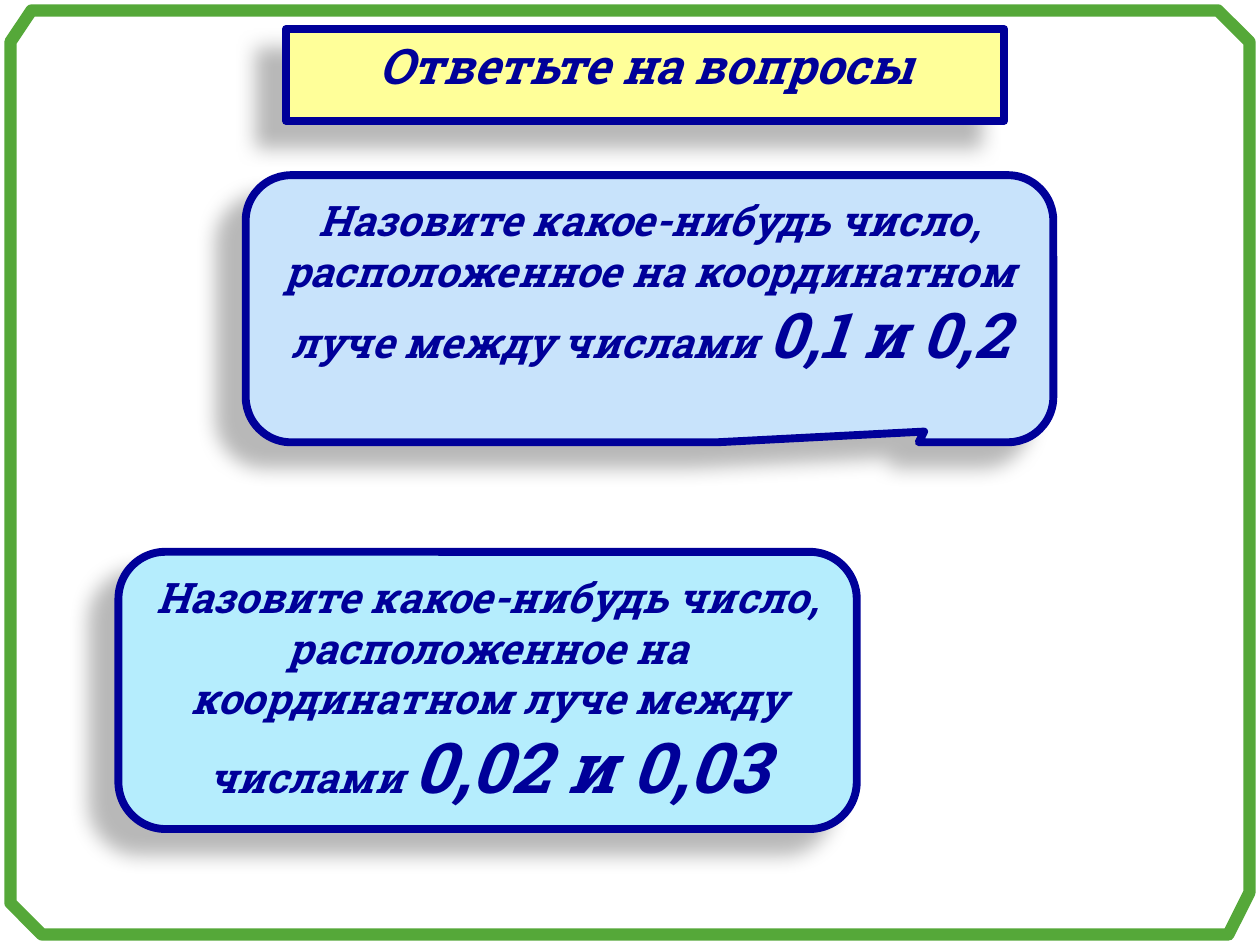
from dataclasses import dataclass

from lxml.etree import SubElement
from pptx import Presentation
from pptx.dml.color import RGBColor
from pptx.enum.shapes import MSO_SHAPE
from pptx.enum.text import MSO_ANCHOR, MSO_AUTO_SIZE, PP_ALIGN
from pptx.oxml.ns import qn
from pptx.shapes.autoshape import Shape
from pptx.slide import Slide
from pptx.util import Emu, Inches, Pt

CELL = Inches(0.1)
COLUMNS, ROWS = 100, 75


@dataclass(frozen=True)
class Theme:
    font: str = "Roboto Slab"
    ink: str = "000099"
    frame: str = "55A839"
    title_fill: str = "FFFF99"
    first_fill: str = "C8E3FB"
    second_fill: str = "B5EDFD"
    shadow: str = "000000"
    frame_width: float = 7
    outline_width: float = 4.5
    title_size: int = 28
    question_size: int = 24
    first_range_size: int = 36
    second_range_size: int = 40


THEME = Theme()
QUESTION = "Назовите какое-нибудь число, расположенное на координатном луче между числами "


@dataclass(frozen=True)
class Phrase:
    text: str
    size: int


@dataclass(frozen=True)
class Callout:
    column: float
    row: float
    columns: float
    rows: float
    pointer: tuple[float, float]
    fill: str
    phrases: tuple[Phrase, ...]
    text_format: dict


TITLE_FORMAT = {"auto_size": MSO_AUTO_SIZE.NONE}
QUESTION_FORMAT = {
    "margin_left": 0,
    "margin_right": 0,
    "auto_size": MSO_AUTO_SIZE.SHAPE_TO_FIT_TEXT,
}

HEADING = Callout(22.7, 2.3, 57, 7.3, (-0.21, 0.42), THEME.title_fill,
                  (Phrase("Ответьте на вопросы", THEME.title_size),), TITLE_FORMAT)
QUESTIONS = (
    Callout(19.5, 13.9, 64.1, 21.2, (0.34, 0.46), THEME.first_fill,
            (Phrase(QUESTION, THEME.question_size),
             Phrase("0,1 и 0,2", THEME.first_range_size)), QUESTION_FORMAT),
    Callout(9.4, 43.8, 58.6, 22, (0.5, -0.31), THEME.second_fill,
            (Phrase(QUESTION, THEME.question_size),
             Phrase("0,02 и 0,03", THEME.second_range_size)), QUESTION_FORMAT),
)

EDGE, CUT = 0.83, 3.33
FRAME_CORNERS = (
    (EDGE, CUT), (EDGE, ROWS - CUT), (CUT, ROWS - EDGE),
    (COLUMNS - 2.5, ROWS - EDGE), (COLUMNS - EDGE, ROWS - 4.17),
    (COLUMNS - EDGE, CUT), (COLUMNS - CUT, EDGE), (2.5, EDGE),
)


def cells(count: float) -> Emu:
    return Emu(round(count * CELL))


def apply_format(target: object, values: dict) -> None:
    for attribute, value in values.items():
        setattr(target, attribute, value)


def set_outline(shape: Shape, color: str, width: float) -> None:
    shape.line.color.rgb = RGBColor.from_string(color)
    shape.line.width = Pt(width)
    shape.shadow.inherit = False


def cast_shadow(shape: Shape) -> None:
    effects = shape.element.spPr.find(qn("a:effectLst"))
    shadow = SubElement(effects, qn("a:outerShdw"), blurRad=str(Pt(11.8)),
                        dist=str(Pt(19.7)), dir=str(141 * 60000),
                        algn="ctr", rotWithShape="0")
    color = SubElement(shadow, qn("a:srgbClr"), val=THEME.shadow)
    SubElement(color, qn("a:alpha"), val="28000")


def draw_frame(slide: Slide) -> Shape:
    start, *corners = [(cells(x), cells(y)) for x, y in FRAME_CORNERS]
    builder = slide.shapes.build_freeform(*start)
    builder.add_line_segments(corners, close=True)
    frame = builder.convert_to_shape()
    frame.fill.background()
    set_outline(frame, THEME.frame, THEME.frame_width)
    return frame


def shape_title(slide: Slide) -> Shape:
    title = slide.shapes.title
    apply_format(title, {"left": 0, "top": 0, "width": CELL, "height": CELL})
    geometry = SubElement(title.element.spPr, qn("a:prstGeom"), prst="wedgeRoundRectCallout")
    SubElement(geometry, qn("a:avLst"))
    return title


def add_callout(slide: Slide) -> Shape:
    return slide.shapes.add_shape(MSO_SHAPE.ROUNDED_RECTANGULAR_CALLOUT, 0, 0, CELL, CELL)


def format_callout(shape: Shape, callout: Callout) -> None:
    apply_format(shape, {
        "left": cells(callout.column),
        "top": cells(callout.row),
        "width": cells(callout.columns),
        "height": cells(callout.rows),
    })
    for index, adjustment in enumerate((*callout.pointer, 0.17)):
        shape.adjustments[index] = adjustment
    shape.fill.solid()
    shape.fill.fore_color.rgb = RGBColor.from_string(callout.fill)
    set_outline(shape, THEME.ink, THEME.outline_width)
    cast_shadow(shape)

    frame = shape.text_frame
    apply_format(frame, {"word_wrap": True, "vertical_anchor": MSO_ANCHOR.TOP,
                         **callout.text_format})
    paragraph = frame.paragraphs[0]
    paragraph.alignment = PP_ALIGN.CENTER
    for phrase in callout.phrases:
        run = paragraph.add_run()
        run.text = phrase.text
        apply_format(run.font, {"name": THEME.font, "size": Pt(phrase.size),
                                "bold": True, "italic": True})
        run.font.color.rgb = RGBColor.from_string(THEME.ink)


def main() -> None:
    presentation = Presentation()
    presentation.slide_width = cells(COLUMNS)
    presentation.slide_height = cells(ROWS)
    slide = presentation.slides.add_slide(presentation.slide_layouts[5])
    border = draw_frame(slide)
    title = shape_title(slide)
    title.element.addprevious(border.element)
    format_callout(title, HEADING)
    for question in QUESTIONS:
        format_callout(add_callout(slide), question)
    presentation.save("out.pptx")


if __name__ == "__main__":
    main()
